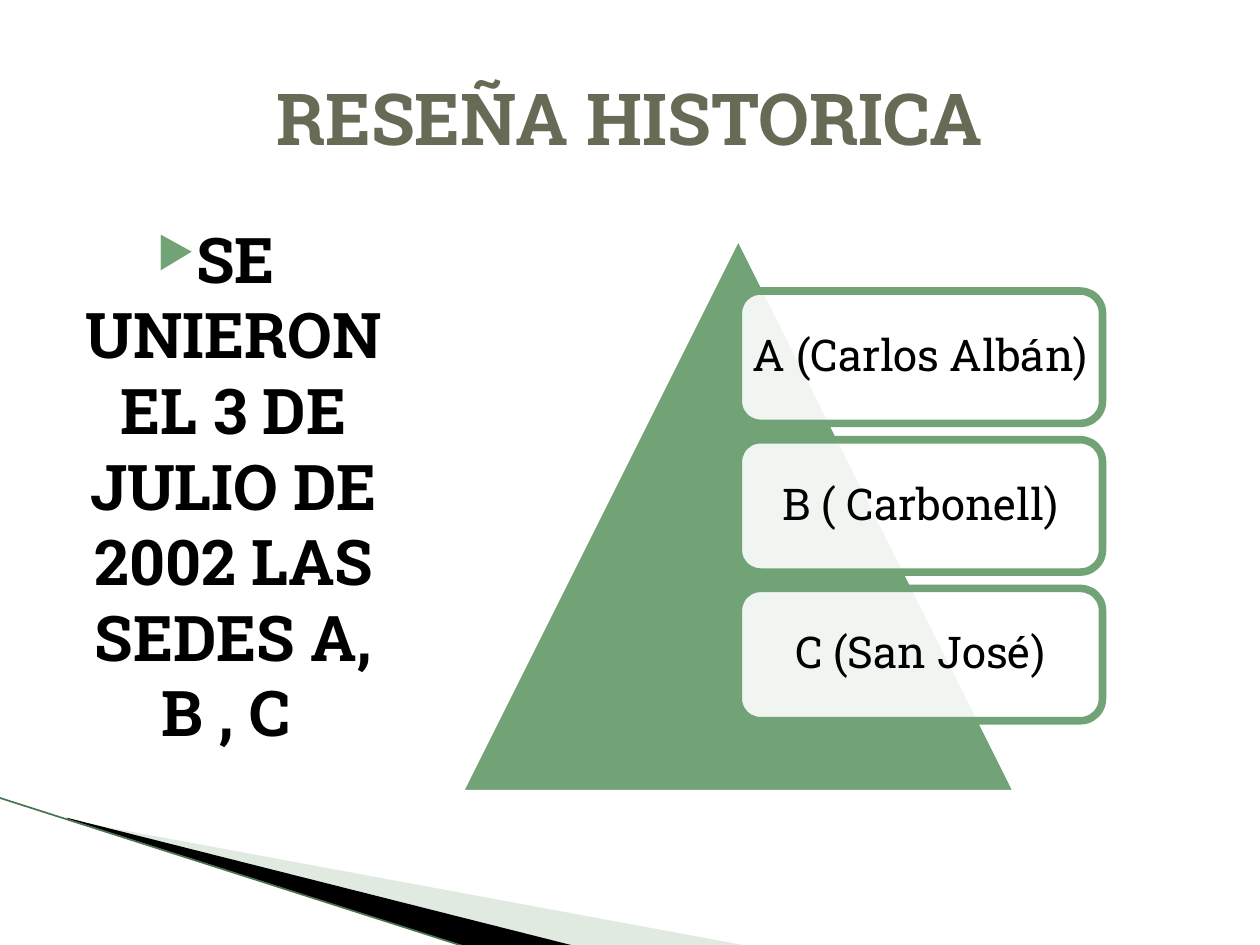
"""Build the historical review slide with a pyramid of three school sites."""
from dataclasses import dataclass

from lxml import etree
from pptx import Presentation
from pptx.dml.color import RGBColor
from pptx.enum import shapes, text
from pptx.oxml import ns
from pptx.util import Inches, Pt


@dataclass(frozen=True)
class Theme:
    font: str = "Roboto Slab"
    title: str = "676A55"
    ink: str = "000000"
    paper: str = "FFFFFF"
    green: str = "72A376"
    pale: str = "B3CBB5"
    edge: str = "4A7350"
    title_size: float = 41
    body_size: float = 36
    label_size: float = 25
    outline: float = 4.33


def add_xml(parent, tag, **attrs):
    return etree.SubElement(parent, ns.qn(tag), attrs)


def write(sp, words, size, color, bold, inset, anchor):
    tf = sp.text_frame
    frame = {"word_wrap": True, "vertical_anchor": anchor,
             "margin_left": inset[0], "margin_right": inset[0],
             "margin_top": inset[1], "margin_bottom": inset[1]}
    for name, value in frame.items():
        setattr(tf, name, value)
    p = tf.paragraphs[0]
    p.alignment = text.PP_ALIGN.CENTER
    r = p.add_run()
    r.text = words
    for name, value in {"name": theme.font, "size": Pt(size), "bold": bold}.items():
        setattr(r.font, name, value)
    r.font.color.rgb = RGBColor.from_string(color)
    return p


theme = Theme()
prs = Presentation()
prs.slide_width, prs.slide_height = Inches(10), Inches(7.5)
s = prs.slides.add_slide(prs.slide_layouts[5])
s.background.fill.solid()
s.background.fill.fore_color.rgb = RGBColor.from_string(theme.paper)

swooshes = [
    ([(0.55, 6.51), (5.95, 7.51), (4.56, 7.51), (0.55, 6.5)], theme.pale, 40),
    ([(0.53, 6.49), (4.57, 7.51), (3.72, 7.52), (0.54, 6.5)], theme.ink, 100),
]
filled = []
for points, color, opacity in swooshes:
    corners = [(Inches(x), Inches(y)) for x, y in points]
    builder = s.shapes.build_freeform(*corners[0])
    builder.add_line_segments(corners[1:])
    filled.append((builder.convert_to_shape(), color, opacity, None))

edge = s.shapes.add_connector(shapes.MSO_CONNECTOR.STRAIGHT,
                              Inches(-0.01), Inches(6.33), Inches(3.71), Inches(7.52))
edge.line.color.rgb = RGBColor.from_string(theme.edge)
edge.line.width = Pt(0.95)
add_xml(edge._element.spPr, "a:effectLst")

title = s.shapes.title
title.left, title.top, title.width, title.height = map(Inches, (0.5, 0.3, 9, 1.25))
write(title, "RESEÑA HISTORICA", theme.title_size, theme.title, True,
      (Inches(0.1), Inches(0.05)), text.MSO_ANCHOR.MIDDLE)

body = s.shapes.add_textbox(*map(Inches, (0.12, 1.7, 3.07, 5.3)))
p = write(body, "SE UNIERON EL 3 DE JULIO DE 2002 LAS SEDES A, B , C ",
          theme.body_size, theme.ink, True,
          (Inches(0.1), Inches(0.05)), text.MSO_ANCHOR.TOP)
pPr = p._p.get_or_add_pPr()
pPr.set("marL", str(Inches(0.4)))
pPr.set("indent", str(Inches(-0.28)))
add_xml(add_xml(pPr, "a:buClr"), "a:srgbClr", val=theme.green)
add_xml(pPr, "a:buSzPct", val="68000")
add_xml(pPr, "a:buChar", char="▶")

pyramid = s.shapes.add_shape(shapes.MSO_SHAPE.ISOSCELES_TRIANGLE,
                             *map(Inches, (3.64, 1.86, 4.44, 4.44)))
filled.append((pyramid, theme.green, 100, theme.paper))

for i, site in enumerate(["A (Carlos Albán)", "B ( Carbonell)", "C (San José)"]):
    box = s.shapes.add_shape(shapes.MSO_SHAPE.ROUNDED_RECTANGLE,
                             *map(Inches, (5.86, 2.31 + 1.18 * i, 2.89, 1.05)))
    p = write(box, site, theme.label_size, theme.ink, False,
              (Inches(0.04), Inches(0.05)), text.MSO_ANCHOR.MIDDLE)
    p.line_spacing = 0.9
    filled.append((box, theme.paper, 90, theme.green))

for sp, color, opacity, outline in filled:
    sp.shadow.inherit = False
    sp.fill.solid()
    sp.fill.fore_color.rgb = RGBColor.from_string(color)
    if opacity < 100:
        tint = sp._element.spPr.find(ns.qn("a:solidFill"))[0]
        add_xml(tint, "a:alpha", val=str(opacity * 1000))
    if outline:
        sp.line.color.rgb = RGBColor.from_string(outline)
        sp.line.width = Pt(theme.outline)
    else:
        sp.line.fill.background()

prs.save("out.pptx")
